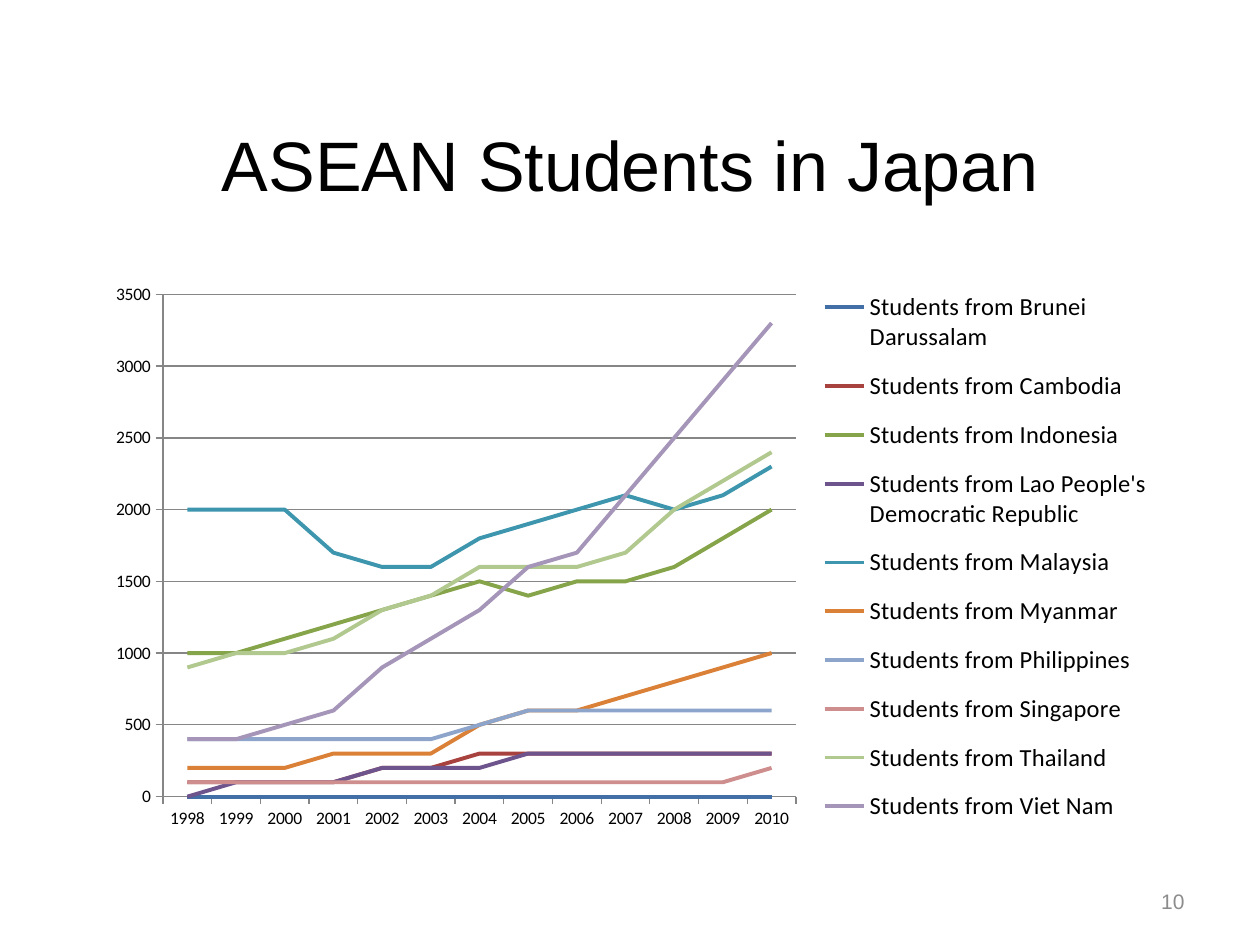
from lxml import etree
from pptx import Presentation
from pptx.chart.data import CategoryChartData
from pptx.dml.color import RGBColor
from pptx.enum.chart import XL_CHART_TYPE as ChartType
from pptx.enum.chart import XL_LEGEND_POSITION as LegendPosition
from pptx.enum.chart import XL_MARKER_STYLE as Marker
from pptx.enum.chart import XL_TICK_MARK as Tick
from pptx.enum.text import MSO_ANCHOR as Anchor
from pptx.enum.text import PP_ALIGN as Align
from pptx.oxml.ns import qn
from pptx.util import Inches, Pt


def color(hex_text):
    return RGBColor.from_string(hex_text)


def place(part, x, y, width, height, inner=False):
    """Fix a chart part by percentages of the chart's size."""
    layout = part.find(qn("c:layout"))
    if layout is None:
        layout = etree.Element(qn("c:layout"))
        if inner:
            part.insert(0, layout)
        else:
            part.find(qn("c:legendPos")).addnext(layout)
    manual = etree.SubElement(layout, qn("c:manualLayout"))
    settings = [("layoutTarget", "inner")] if inner else []
    settings += [("xMode", "edge"), ("yMode", "edge"),
                 ("x", x / 100), ("y", y / 100),
                 ("w", width / 100), ("h", height / 100)]
    for name, value in settings:
        etree.SubElement(manual, qn(f"c:{name}")).set("val", str(value))


deck = Presentation()
deck.slide_width, deck.slide_height = Inches(10), Inches(7.5)
page = deck.slides.add_slide(deck.slide_layouts[6])

# Title and page number
texts = [
    ("ASEAN Students in Japan", (0.75, 0.67, 8.5, 1.25), 40, "000000", Align.CENTER),
    ("10", (7.17, 6.95, 2.33, 0.4), 12, "8C8C8C", Align.RIGHT),
]
for text, bounds, size, shade, align in texts:
    box = page.shapes.add_textbox(*map(Inches, bounds))
    frame = box.text_frame
    frame.word_wrap = True
    frame.vertical_anchor = Anchor.MIDDLE
    para = frame.paragraphs[0]
    para.text, para.alignment = text, align
    para.font.name, para.font.size = "Arial", Pt(size)
    para.font.color.rgb = color(shade)

# Students by country of origin, 1998 to 2010, in hundreds
countries = [
    ("Brunei Darussalam", "416FA6", [0] * 13),
    ("Cambodia", "A8423F", [1, 1, 1, 1, 2, 2, 3, 3, 3, 3, 3, 3, 3]),
    ("Indonesia", "86A44A", [10, 10, 11, 12, 13, 14, 15, 14, 15, 15, 16, 18, 20]),
    ("Lao People's Democratic Republic", "6E548D",
     [0, 1, 1, 1, 2, 2, 2, 3, 3, 3, 3, 3, 3]),
    ("Malaysia", "3D96AE", [20, 20, 20, 17, 16, 16, 18, 19, 20, 21, 20, 21, 23]),
    ("Myanmar", "DA8137", [2, 2, 2, 3, 3, 3, 5, 6, 6, 7, 8, 9, 10]),
    ("Philippines", "8EA5CB", [4, 4, 4, 4, 4, 4, 5, 6, 6, 6, 6, 6, 6]),
    ("Singapore", "CE8E8D", [1, 1, 1, 1, 1, 1, 1, 1, 1, 1, 1, 1, 2]),
    ("Thailand", "B1C88F", [9, 10, 10, 11, 13, 14, 16, 16, 16, 17, 20, 22, 24]),
    ("Viet Nam", "A595B9", [4, 4, 5, 6, 9, 11, 13, 16, 17, 21, 25, 29, 33]),
]
data = CategoryChartData()
data.categories = [str(year) for year in range(1998, 2011)]
for country, _, hundreds in countries:
    data.add_series(f"Students from {country}", [100 * count for count in hundreds])

bounds = map(Inches, (0.75, 2.17, 8.5, 4.5))
chart = page.shapes.add_chart(ChartType.LINE, *bounds, data).chart
chart.has_title = False
chart.font.name, chart.font.size = "Calibri", Pt(10)
chart.font.color.rgb = color("000000")
chart.plots[0].vary_by_categories = False
for series, (_, shade, _) in zip(chart.plots[0].series, countries):
    series.smooth = False
    series.marker.style = Marker.NONE
    series.format.line.width = Pt(2.25)
    series.format.line.color.rgb = color(shade)

# Axes and gridlines
years, students = chart.category_axis, chart.value_axis
students.minimum_scale, students.maximum_scale = 0, 3500
students.major_unit = 500
students.has_major_gridlines = True
years.major_tick_mark = students.major_tick_mark = Tick.OUTSIDE
for part in (years, students, students.major_gridlines):
    part.format.line.width = Pt(0.75)
    part.format.line.color.rgb = color("868686")

# Legend and plot area
chart.has_legend = True
legend = chart.legend
legend.position = LegendPosition.RIGHT
legend.include_in_layout = False
legend.font.name, legend.font.size = "Calibri", Pt(14)
legend.font.color.rgb = color("000000")
plot_area = chart.plots[0]._element.getparent()
place(plot_area, 6.4, 3.7, 59.1, 88.6, inner=True)
place(legend._element, 67.2, 0, 32, 100)

deck.save("out.pptx")
